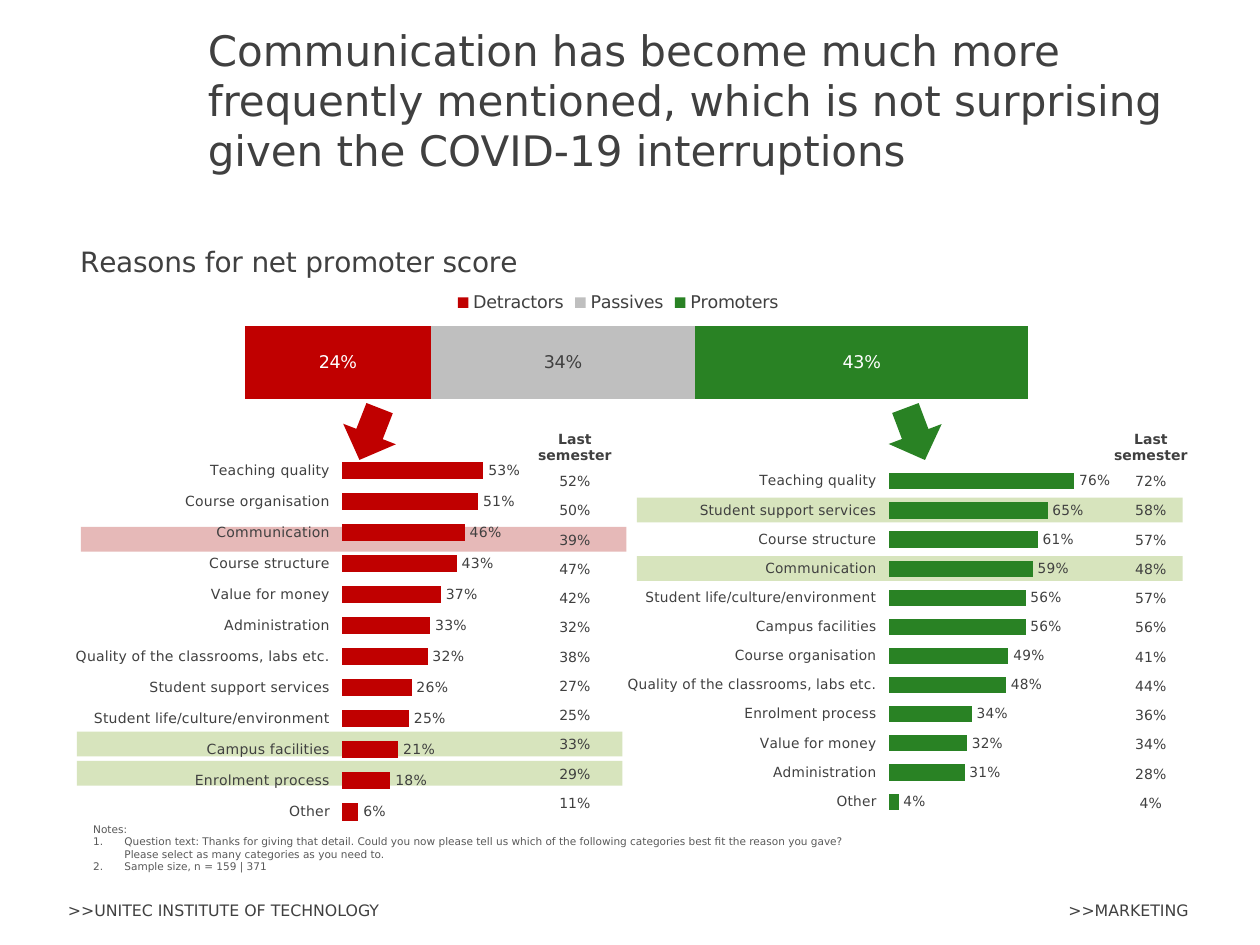
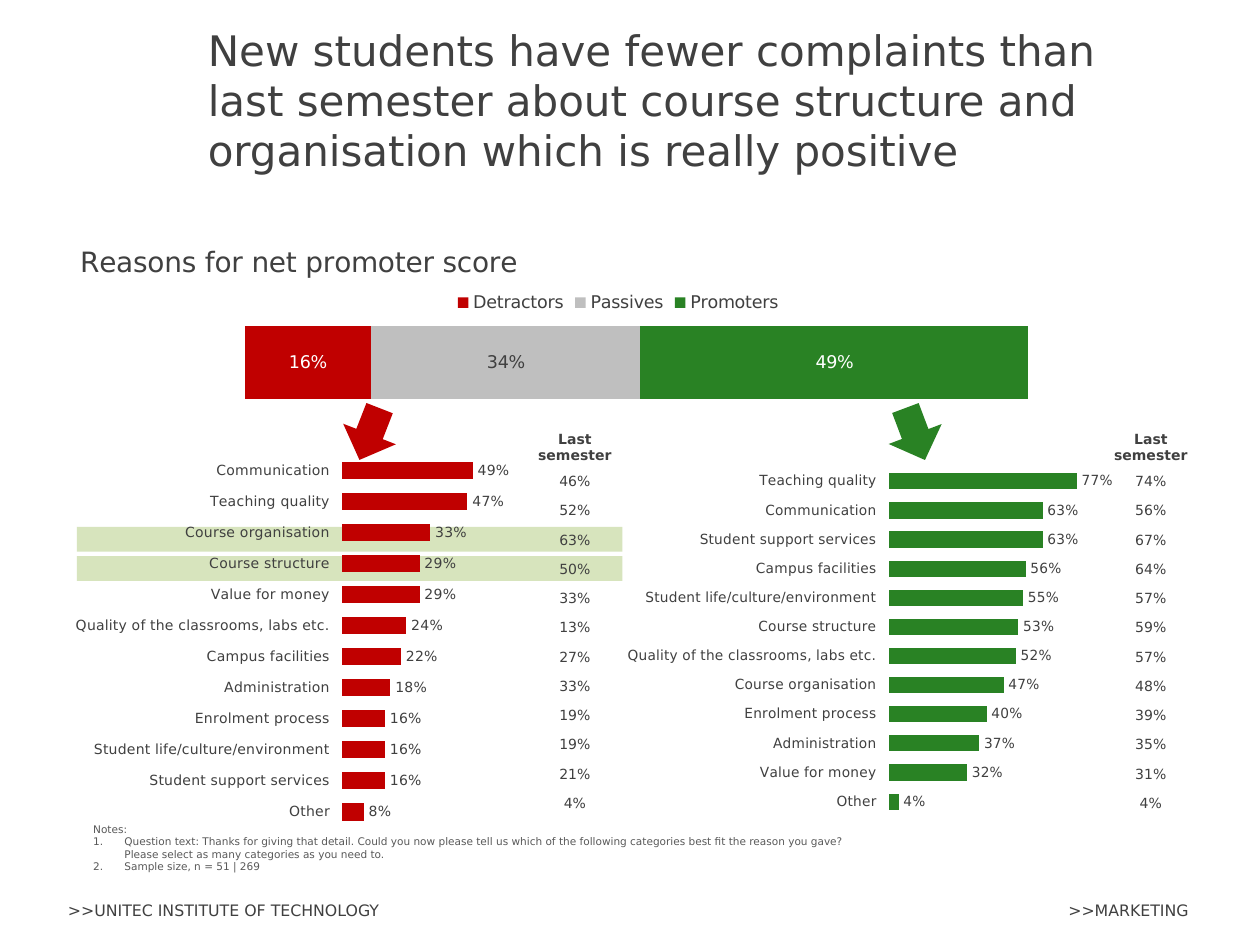
import pptx
import pptx.util
import pptx.chart.data
import pptx.dml.color
import pptx.enum.chart
import pptx.enum.shapes
import pptx.enum.text
import pptx.oxml
import pptx.oxml.ns

Cm, Pt = pptx.util.Cm, pptx.util.Pt
RGB = pptx.dml.color.RGBColor.from_string
qn = pptx.oxml.ns.qn
ALIGN = pptx.enum.text.PP_ALIGN
MIDDLE = pptx.enum.text.MSO_ANCHOR.MIDDLE
TOP = pptx.enum.text.MSO_ANCHOR.TOP
SHAPE = pptx.enum.shapes.MSO_SHAPE
CHART = pptx.enum.chart.XL_CHART_TYPE
LABEL = pptx.enum.chart.XL_LABEL_POSITION

FONT = "DejaVu Sans"
COLORS = {
    "text": "404040",
    "note": "595959",
    "white": "FFFFFF",
    "detractor": "C00000",
    "passive": "BFBFBF",
    "promoter": "298224",
    "worse": "E6B9B8",
    "better": "D7E4BD",
}
NO_GRID_STYLE = "{2D5ABB26-0587-4C30-8999-92F81FD0307C}"
LEFT_BAND, LEFT_BAND_INNER, RIGHT_BAND = 1.55, 1.63, 12.84
ROW = 0.59

# Reason names that both slides use
TEACHING, SUPPORT = "Teaching quality", "Student support services"
ORGANISATION, STRUCTURE = "Course organisation", "Course structure"
COMMUNICATION, VALUE = "Communication", "Value for money"
ADMIN, ROOMS = "Administration", "Quality of the classrooms, labs etc."
LIFE, CAMPUS = "Student life/culture/environment", "Campus facilities"
ENROLMENT, OTHER = "Enrolment process", "Other"

# Reasons are (name, this semester, last semester), in percent
SLIDES = [
    {
        "title": "Communication has become much more frequently mentioned, "
                 "which is not surprising given the COVID-19 interruptions",
        "score": [24, 34, 43],
        "sample": "159 | 371",
        "bands": [(LEFT_BAND_INNER, 2, "worse"), (LEFT_BAND, 9, "better"),
                  (LEFT_BAND, 10, "better"), (RIGHT_BAND, 3, "better"),
                  (RIGHT_BAND, 1, "better")],
        "detractor": [
            (TEACHING, 53, 52), (ORGANISATION, 51, 50), (COMMUNICATION, 46, 39),
            (STRUCTURE, 43, 47), (VALUE, 37, 42), (ADMIN, 33, 32),
            (ROOMS, 32, 38), (SUPPORT, 26, 27), (LIFE, 25, 25),
            (CAMPUS, 21, 33), (ENROLMENT, 18, 29), (OTHER, 6, 11)],
        "promoter": [
            (TEACHING, 76, 72), (SUPPORT, 65, 58), (STRUCTURE, 61, 57),
            (COMMUNICATION, 59, 48), (LIFE, 56, 57), (CAMPUS, 56, 56),
            (ORGANISATION, 49, 41), (ROOMS, 48, 44), (ENROLMENT, 34, 36),
            (VALUE, 32, 34), (ADMIN, 31, 28), (OTHER, 4, 4)],
    },
    {
        "title": "New students have fewer complaints than last semester about "
                 "course structure and organisation which is really positive",
        "score": [16, 34, 49],
        "sample": "51 | 269",
        "bands": [(LEFT_BAND, 2, "better"), (LEFT_BAND, 3, "better")],
        "detractor": [
            (COMMUNICATION, 49, 46), (TEACHING, 47, 52), (ORGANISATION, 33, 63),
            (STRUCTURE, 29, 50), (VALUE, 29, 33), (ROOMS, 24, 13),
            (CAMPUS, 22, 27), (ADMIN, 18, 33), (ENROLMENT, 16, 19),
            (LIFE, 16, 19), (SUPPORT, 16, 21), (OTHER, 8, 4)],
        "promoter": [
            (TEACHING, 77, 74), (COMMUNICATION, 63, 56), (SUPPORT, 63, 67),
            (CAMPUS, 56, 64), (LIFE, 55, 57), (STRUCTURE, 53, 59),
            (ROOMS, 52, 57), (ORGANISATION, 47, 48), (ENROLMENT, 40, 39),
            (ADMIN, 37, 35), (VALUE, 32, 31), (OTHER, 4, 4)],
    },
]


def write(holder, *lines, size=9, color="text", bold=False, align=ALIGN.LEFT,
          numbered=False):
    """Fill a text box or cell; with numbered, every line after the first is a list item."""
    tf = holder.text_frame
    tf.word_wrap = True
    for i, line in enumerate(lines):
        p = tf.paragraphs[0] if i == 0 else tf.add_paragraph()
        p.alignment = align
        if numbered and i:
            pPr = p._p.get_or_add_pPr()
            pPr.set("marL", str(Cm(0.63)))
            pPr.set("indent", str(-Cm(0.63)))
            pPr.append(pptx.oxml.parse_xml(
                f'<a:buAutoNum {pptx.oxml.ns.nsdecls("a")} type="arabicPeriod"/>'))
        r = p.add_run()
        r.text = line
        r.font.name, r.font.size, r.font.bold = FONT, Pt(size), bold
        r.font.color.rgb = RGB(COLORS[color])


def place(part, x, y, w=None, h=None):
    """Fix a chart part at fractions of the chart's size."""
    old = part.find(qn("c:layout"))
    if old is not None:
        part.remove(old)
    values = {"x": x, "y": y}
    target, modes = "", '<c:xMode val="edge"/><c:yMode val="edge"/>'
    if w is not None:
        target = '<c:layoutTarget val="inner"/>'
        values.update(w=w, h=h)
    sizes = "".join(f'<c:{k} val="{v}"/>' for k, v in values.items())
    layout = pptx.oxml.parse_xml(
        f'<c:layout {pptx.oxml.ns.nsdecls("c")}><c:manualLayout>'
        f'{target}{modes}{sizes}</c:manualLayout></c:layout>')
    overlay = part.find(qn("c:overlay"))
    if overlay is not None:
        overlay.addprevious(layout)
    else:
        part.insert(0, layout)


prs = pptx.Presentation()
prs.slide_width, prs.slide_height = Cm(25.4), Cm(19.05)

for data in SLIDES:
    s = prs.slides.add_slide(prs.slide_layouts[6])

    # Highlight bands behind the charts, one per table row
    for left, row, color in data["bands"]:
        sp = s.shapes.add_shape(SHAPE.RECTANGLE, Cm(left), Cm(9.44 + row * ROW),
                                Cm(11), Cm(0.5))
        sp.shadow.inherit = False
        sp.fill.solid()
        sp.fill.fore_color.rgb = RGB(COLORS[color])
        sp.line.fill.background()

    # Charts: score bar on top, reasons on the left and right
    score = zip(("Detractors", "Passives", "Promoters"),
                ("detractor", "passive", "promoter"),
                ("white", "text", "white"), data["score"])
    charts = [(CHART.BAR_STACKED_100, (1.47, 4.75, 22.48, 3.89), 10, "0%",
               (0.154, 0.319, 0.703, 0.681), ["1"],
               [(name, fill, ink, [v]) for name, fill, ink, v in score])]
    for key, left, plot_box in (("detractor", 1.45, (0.52, 0.02, 0.46, 0.96)),
                                ("promoter", 12.65, (0.492, 0.05, 0.431, 0.901))):
        charts.append((CHART.BAR_CLUSTERED, (left, 9.02, 10.49, 7.82), 8, "###0%",
                       plot_box, [name for name, now, last in data[key]],
                       [("Series 1", key, "text", [now for name, now, last in data[key]])]))

    for kind, box, size, fmt, plot_box, cats, series in charts:
        stacked = kind == CHART.BAR_STACKED_100
        cd = pptx.chart.data.CategoryChartData(number_format=fmt)
        cd.categories = cats
        for name, fill, ink, values in series:
            cd.add_series(name, [v / 100 for v in values])
        chart = s.shapes.add_chart(kind, *map(Cm, box), cd).chart
        chart.font.name, chart.font.size = FONT, Pt(size)
        chart.font.color.rgb = RGB(COLORS["text"])
        chart.has_title = chart.has_legend = stacked
        if stacked:
            title = chart.chart_title
            write(title, "Reasons for net promoter score", size=16)
            place(title._element, 0.002, 0.02)
            chart.legend.position = pptx.enum.chart.XL_LEGEND_POSITION.TOP
            chart.legend.include_in_layout = False
            chart.legend.font.name, chart.legend.font.size = FONT, Pt(size)
            chart.legend.font.color.rgb = RGB(COLORS["text"])
            place(chart.legend._element, 0.34, 0.27)

        plot = chart.plots[0]
        plot.gap_width = 80
        plot.overlap = 100 if stacked else 0
        plot.vary_by_categories = False
        for ser, (name, fill, ink, values) in zip(plot.series, series):
            ser.format.fill.solid()
            ser.format.fill.fore_color.rgb = RGB(COLORS[fill])
            labels = ser.data_labels
            labels.show_value = True
            labels.number_format, labels.number_format_is_linked = fmt, False
            labels.position = LABEL.CENTER if stacked else LABEL.OUTSIDE_END
            labels.font.name, labels.font.size = FONT, Pt(size)
            labels.font.color.rgb = RGB(COLORS[ink])

        for axis in (chart.category_axis, chart.value_axis):
            axis.has_major_gridlines = False
            axis.major_tick_mark = pptx.enum.chart.XL_TICK_MARK.NONE
            axis.minor_tick_mark = pptx.enum.chart.XL_TICK_MARK.NONE
            axis.format.line.fill.background()
            axis.tick_labels.font.name = FONT
            axis.tick_labels.font.size = Pt(size)
            axis.tick_labels.font.color.rgb = RGB(COLORS["text"])
            if stacked or axis is not chart.category_axis:
                axis.tick_label_position = pptx.enum.chart.XL_TICK_LABEL_POSITION.NONE
        if not stacked:
            chart.category_axis.tick_label_position = (
                pptx.enum.chart.XL_TICK_LABEL_POSITION.LOW)
            chart.category_axis.reverse_order = True
            chart.value_axis.minimum_scale = 0
            chart.value_axis.maximum_scale = 0.9

        # See-through chart and plot areas, so that the bands show
        space = chart._chartSpace
        area = space.find(".//" + qn("c:plotArea"))
        place(area, *plot_box)
        clear = (f'<c:spPr {pptx.oxml.ns.nsdecls("c", "a")}><a:noFill/>'
                 '<a:ln><a:noFill/></a:ln></c:spPr>')
        area.append(pptx.oxml.parse_xml(clear))
        space.find(qn("c:txPr")).addprevious(pptx.oxml.parse_xml(clear))

    # Arrows from the score bar to the reasons
    for left, turn, color in ((6.88, 21.3, "detractor"), (17.88, 339.4, "promoter")):
        sp = s.shapes.add_shape(SHAPE.DOWN_ARROW, Cm(left), Cm(8.19), Cm(1.14), Cm(1.12))
        sp.rotation = turn
        sp.shadow.inherit = False
        sp.fill.solid()
        sp.fill.fore_color.rgb = RGB(COLORS[color])
        sp.line.fill.background()

    # Last semester's values
    for key, left in (("detractor", 10.74), ("promoter", 22.35)):
        rows = ["Last semester"] + [f"{last}%" for name, now, last in data[key]]
        table = s.shapes.add_table(len(rows), 1, Cm(left), Cm(8.61),
                                   Cm(1.7), Cm(7.85)).table
        table.first_row = table.horz_banding = False
        table._tbl.tblPr.find(qn("a:tableStyleId")).text = NO_GRID_STYLE
        for i, value in enumerate(rows):
            table.rows[i].height = Cm(ROW if i else 0.79)
            cell = table.cell(i, 0)
            cell.fill.background()
            cell.vertical_anchor = MIDDLE
            cell.margin_left = cell.margin_right = cell.margin_top = Cm(0.03)
            cell.margin_bottom = 0
            write(cell, value, size=8, bold=i == 0, align=ALIGN.CENTER)

    # Title, notes and footers
    notes = ("Notes:",
             "Question text: Thanks for giving that detail. Could you now please tell us "
             "which of the following categories best fit the reason you gave? "
             "Please select as many categories as you need to.",
             f"Sample size, n = {data['sample']}")
    for box, anchor, lines, style in (
            ((3.94, 1.3, 19.99, 1.42), MIDDLE, (data["title"],), {"size": 24}),
            ((1.63, 16.46, 16.1, 0.69), TOP, notes,
             {"size": 6, "color": "note", "numbered": True}),
            ((1.12, 18.03, 10.34, 0.64), TOP, (">>UNITEC INSTITUTE OF TECHNOLOGY",), {}),
            ((13.67, 18.03, 10.54, 0.64), MIDDLE, (">>MARKETING",),
             {"align": ALIGN.RIGHT})):
        sp = s.shapes.add_textbox(*map(Cm, box))
        sp.text_frame.vertical_anchor = anchor
        write(sp, *lines, **style)

prs.save("out.pptx")
